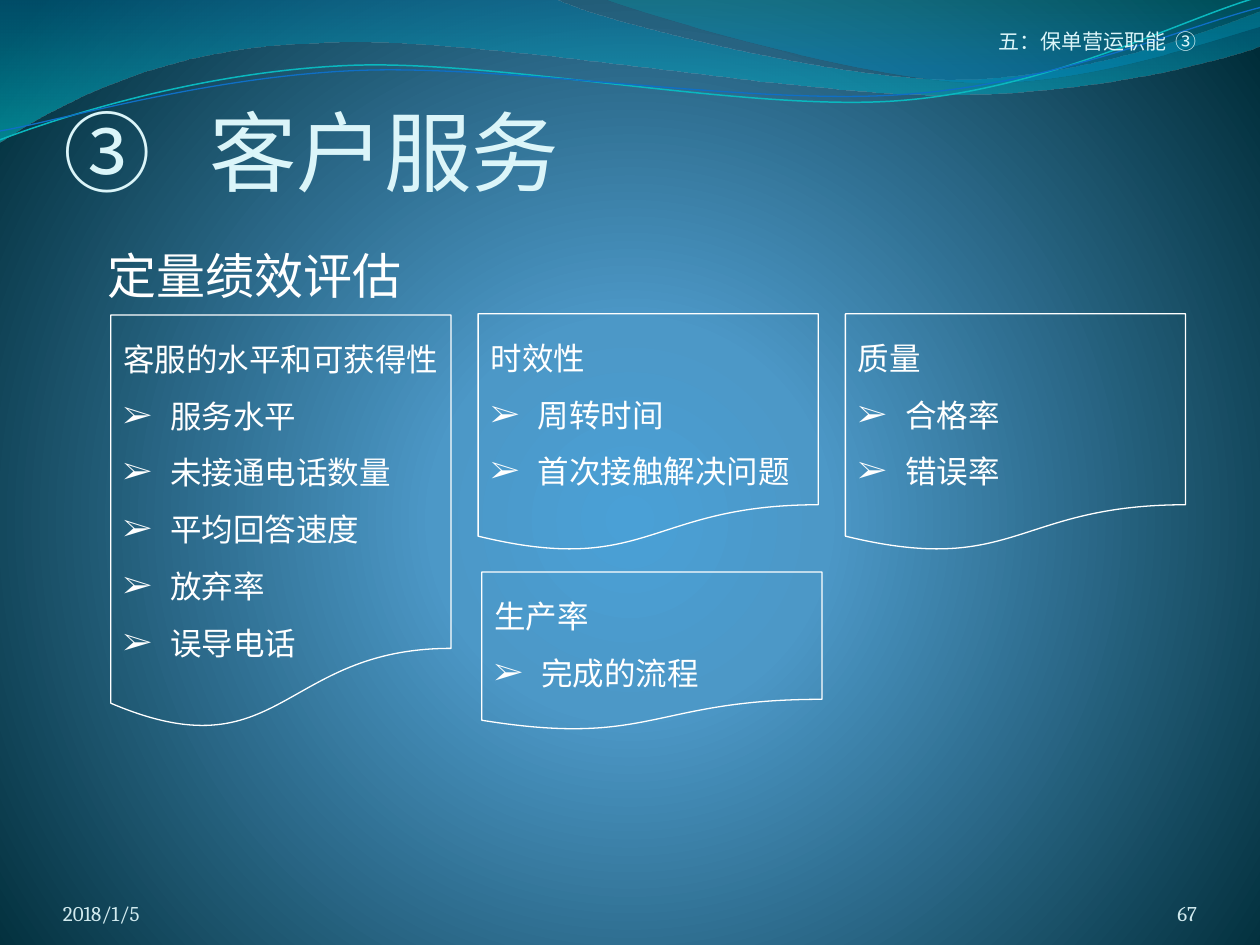
from lxml.etree import SubElement
from pptx import Presentation
from pptx.dml.color import RGBColor
from pptx.enum.shapes import MSO_SHAPE as Shape
from pptx.enum.text import MSO_ANCHOR as Anchor, PP_ALIGN as Align
from pptx.oxml.ns import qn
from pptx.util import Inches, Pt

WHITE, PALE, FOOTER = "FFFFFF", "DBF5F9", "D1EAEE"
COLUMNS, ROWS = 100, 75
CARD_LEFT, CARD_PITCH, CARD_WIDTH = 8.8, 29.15, 27
BULLET_INDENT = Pt(27)

# Waves, in inches: a start point, then lines (2 numbers) and Bezier curves (6 numbers).
BROAD_WAVE = [(0, 0), (4.4, -0.01), (4.76, 0.17, 6.64, 0.63, 7.58, 0.63),
              (8.53, 0.63, 9.58, 0.26, 10, 0.09), (10.01, 0.36),
              (9.83, 0.44, 8.7, 0.76, 7.46, 0.75), (6.22, 0.75, 3.82, 0.28, 2.57, 0.34),
              (1.29, 0.36, 0.46, 0.83, -0.01, 1.13), (0, 0)]
RIGHT_WAVE = [(4.79, -0.01), (5.09, 0.11, 6.82, 0.62, 7.69, 0.65),
              (8.56, 0.69, 9.61, 0.32, 10, 0.21), (10, 0), (4.79, -0.01)]
TEAL_CURVE = [(0, 1.11), (0.48, 0.93, 1.58, 0.57, 2.77, 0.52),
              (3.95, 0.47, 5.93, 0.89, 7.13, 0.8), (8.33, 0.71, 9.38, 0.15, 9.98, -0.02)]
BLUE_CURVE = [(0, 1.04), (0.47, 0.96, 1.64, 0.61, 2.83, 0.56),
              (4.03, 0.51, 5.97, 0.84, 7.17, 0.75), (8.36, 0.67, 9.41, 0.21, 10, 0.06)]

# Cards: column, top row, height in rows, heading, bullet items.
CARDS = [
    (0, 25, 33, "客服的水平和可获得性",
     ["服务水平", "未接通电话数量", "平均回答速度", "放弃率", "误导电话"]),
    (1, 24.9, 18.9, "时效性", ["周转时间", "首次接触解决问题"]),
    (2, 24.9, 18.9, "质量", ["合格率", "错误率"]),
    (1.01, 45.4, 12.6, "生产率", ["完成的流程"]),
]


def color(hex_string):
    return RGBColor.from_string(hex_string)


def bend(shape, segments):
    """Turn the straight segments of a freeform into Bezier curves where given."""
    lines = list(shape._element.iter(qn("a:lnTo")))
    for line, segment in zip(lines, segments):
        if len(segment) == 6:
            curve = SubElement(line.getparent(), qn("a:cubicBezTo"))
            for x, y in zip(segment[::2], segment[1::2]):
                SubElement(curve, qn("a:pt"), x=str(Inches(x) - shape.left),
                           y=str(Inches(y) - shape.top))
            line.getparent().replace(line, curve)


def set_gradient(gradient, stops, center=None):
    """Fill a gradFill with (percent, colour, opacity) stops, downward or round a center."""
    for child in list(gradient):
        gradient.remove(child)
    stop_list = SubElement(gradient, qn("a:gsLst"))
    for percent, hex_string, opacity in stops:
        stop = SubElement(stop_list, qn("a:gs"), pos=str(percent * 1000))
        tint = SubElement(stop, qn("a:srgbClr"), val=hex_string)
        if opacity < 100:
            SubElement(tint, qn("a:alpha"), val=str(opacity * 1000))
    if center:
        circle = SubElement(gradient, qn("a:path"), path="circle")
        edges = {side: str(share * 1000) for side, share in zip("ltrb", center)}
        SubElement(circle, qn("a:fillToRect"), **edges)
    else:
        SubElement(gradient, qn("a:lin"), ang="5400000", scaled="1")


class SlideWriter:
    def __init__(self, deck):
        self.deck = deck
        self.slide = deck.slides.add_slide(deck.slide_layouts[6])

    def place(self, left, top, width, height):
        """Convert grid columns and rows to slide lengths."""
        across, down = self.deck.slide_width / COLUMNS, self.deck.slide_height / ROWS
        return [round(n) for n in (left * across, top * down, width * across, height * down)]

    def background(self, stops, center):
        self.slide.background.fill.gradient()
        gradient = self.slide._element.find(".//" + qn("a:gradFill"))
        set_gradient(gradient, stops, center)

    def wave(self, outline, closed):
        points = [(Inches(segment[-2]), Inches(segment[-1])) for segment in outline]
        builder = self.slide.shapes.build_freeform(*points[0])
        builder.add_line_segments(points[1:], close=closed)
        shape = builder.convert_to_shape()
        shape.shadow.inherit = False
        bend(shape, outline[1:])
        return shape

    def filled_wave(self, outline, stops):
        shape = self.wave(outline, closed=True)
        shape.line.fill.background()
        shape.fill.gradient()
        set_gradient(shape._element.spPr.find(qn("a:gradFill")), stops)

    def curve(self, outline, hex_string, width):
        shape = self.wave(outline, closed=False)
        shape.fill.background()
        self.outline(shape, hex_string, width)

    def outline(self, shape, hex_string, width):
        shape.line.color.rgb = color(hex_string)
        shape.line.width = Pt(width)

    def style(self, para, font, size, hex_string):
        for span in para.runs:
            span.font.name, span.font.size = font, Pt(size)
            span.font.color.rgb = color(hex_string)

    def text(self, area, words, font, size, hex_string, align=Align.LEFT,
             anchor=Anchor.BOTTOM, inset=(0, 0)):
        box = self.slide.shapes.add_textbox(*self.place(*area))
        frame = box.text_frame
        frame.word_wrap = True
        frame.vertical_anchor = anchor
        frame.margin_left = frame.margin_right = Inches(inset[0])
        frame.margin_top = Inches(inset[1])
        frame.margin_bottom = 0
        para = frame.paragraphs[0]
        para.text = words
        para.alignment = align
        self.style(para, font, size, hex_string)
        return para

    def card(self, column, top, height, heading, items):
        area = (CARD_LEFT + column * CARD_PITCH, top, CARD_WIDTH, height)
        shape = self.slide.shapes.add_shape(Shape.FLOWCHART_DOCUMENT, *self.place(*area))
        shape.shadow.inherit = False
        shape.fill.background()
        self.outline(shape, WHITE, 0.75)
        frame = shape.text_frame
        frame.word_wrap = True
        frame.vertical_anchor = Anchor.TOP
        frame.text = "\n".join([heading, *items])
        for para in frame.paragraphs:
            para.alignment = Align.LEFT
            para.line_spacing = 1.5
            self.style(para, "Times New Roman", 18, WHITE)
        for para in frame.paragraphs[1:]:
            self.bullet(para)

    def bullet(self, para):
        settings = para._p.get_or_add_pPr()
        settings.set("marL", str(BULLET_INDENT))
        settings.set("indent", str(-BULLET_INDENT))
        SubElement(settings, qn("a:buFont"), typeface="Times New Roman")
        SubElement(settings, qn("a:buChar"), char="➢")


def main():
    deck = Presentation()
    deck.slide_width, deck.slide_height = Inches(10), Inches(7.5)
    page = SlideWriter(deck)
    page.background([(0, "4AA0D6", 100), (25, "4C98C7", 100), (100, "002C38", 100)],
                    center=(10, 110, 10, 100))
    page.filled_wave(BROAD_WAVE, [(0, "0074A1", 45), (100, "00C6CF", 55)])
    page.filled_wave(RIGHT_WAVE, [(0, "00A1A9", 30), (80, "008BBF", 45)])
    page.curve(TEAL_CURVE, "0AB8BF", 0.85)
    page.curve(BLUE_CURVE, "0F6FC6", 0.75)

    page.text((5, 69.5, 23.3, 4), "2018/1/5", "Cambria", 12, FOOTER)
    page.text((86.7, 69.5, 8.3, 4), "67", "Cambria", 12, FOOTER, Align.RIGHT)
    page.text((62.6, 0, 32.4, 4.3), "五：保单营运职能  ③", "Calibri", 12, PALE,
              Align.RIGHT, inset=(0, 0.05))
    page.text((5, 6, 80.1, 10.1), "③   客户服务", "Calibri", 50, PALE, inset=(0, 0.05))
    subtitle = page.text((7.55, 16.2, 33, 8.6), "定量绩效评估", "Cambria", 28, WHITE,
                         anchor=Anchor.TOP, inset=(0.1, 0.05))
    subtitle.line_spacing = 1.6
    subtitle.space_before = Pt(6.5)
    for card in CARDS:
        page.card(*card)
    deck.save("out.pptx")


if __name__ == "__main__":
    main()
